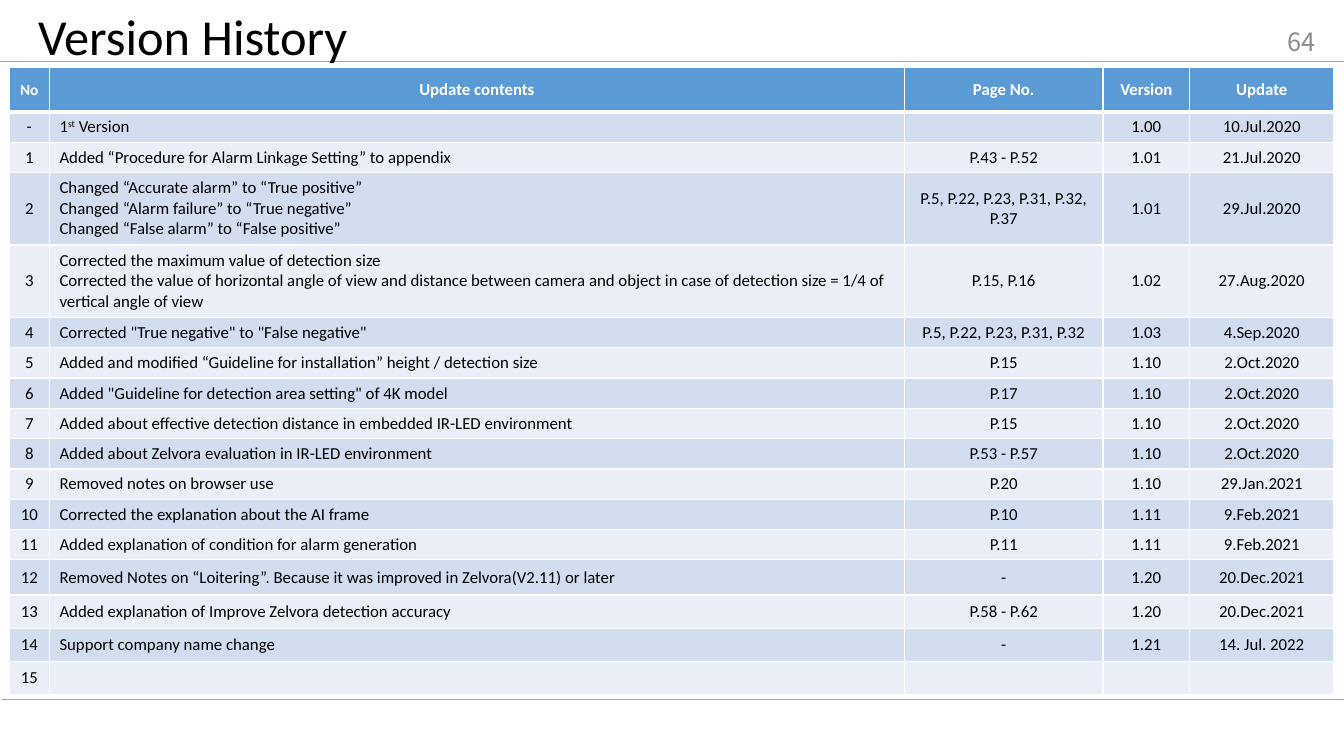
import pptx
import pptx.util
import pptx.dml.color
import pptx.enum.shapes
import pptx.enum.text
import pptx.oxml
import pptx.oxml.ns
from lxml import etree

Pt = pptx.util.Pt
RGBColor = pptx.dml.color.RGBColor
ALIGN = pptx.enum.text.PP_ALIGN
MIDDLE = pptx.enum.text.MSO_ANCHOR.MIDDLE
qn = pptx.oxml.ns.qn

BLACK = RGBColor(0x00, 0x00, 0x00)
WHITE = RGBColor(0xFF, 0xFF, 0xFF)
GRAY = RGBColor(0x8C, 0x8C, 0x8C)
RULE = RGBColor(0xA6, 0xA6, 0xA6)
HEAD = RGBColor(0x5B, 0x9B, 0xD5)
BANDS = [RGBColor(0xEA, 0xEF, 0xF7), RGBColor(0xD2, 0xDE, 0xEF)]

deck = pptx.Presentation()
deck.slide_width = pptx.util.Inches(13.33)
deck.slide_height = pptx.util.Inches(7.5)
slide = deck.slides.add_slide(deck.slide_layouts[6])
COL = deck.slide_width / 13.33
ROW = deck.slide_height / 7.5


def place(x, y, w, h):
    return int(x * COL), int(y * ROW), int(w * COL), int(h * ROW)


def write(para, text, size, color, face="Calibri", bold=False):
    run = para.add_run()
    run.text = text
    run.font.size = Pt(size)
    run.font.name = face
    run.font.bold = bold
    run.font.color.rgb = color
    return run


for left, top in [(0, 0.61), (0.02, 6.94)]:
    x, y, right, end = place(left, top, 13.33, top)
    line = slide.shapes.add_connector(
        pptx.enum.shapes.MSO_CONNECTOR.STRAIGHT, x, y, right, end)
    line.line.color.rgb = RULE
    line.line.width = Pt(0.75)
    etree.SubElement(line._element.spPr, qn("a:effectLst"))

labels = [
    ((0.28, 0.08, 11.5, 0.62), "Version History", 36, BLACK, "Calibri", ALIGN.LEFT),
    ((10.15, 0.21, 3, 0.4), "64", 18, GRAY, "Noto Sans CJK JP", ALIGN.RIGHT),
]
for box, text, size, color, face, align in labels:
    frame = slide.shapes.add_textbox(*place(*box)).text_frame
    frame.word_wrap = True
    frame.vertical_anchor = MIDDLE
    para = frame.paragraphs[0]
    para.alignment = align
    para.line_spacing = 0.9 if size == 36 else 1.0
    write(para, text, size, color, face)

rows = [
    ("No", "Update contents", "Page No.", "Version", "Update"),
    ("-", "1|st| Version", "", "1.00", "10.Jul.2020"),
    ("1", "Added “Procedure for Alarm Linkage Setting” to appendix",
     "P.43 - P.52", "1.01", "21.Jul.2020"),
    ("2", "Changed “Accurate alarm” to “True positive”\n"
     "Changed “Alarm failure” to “True negative”\n"
     "Changed “False alarm” to “False positive”",
     "P.5, P.22, P.23, P.31, P.32, P.37", "1.01", "29.Jul.2020"),
    ("3", "Corrected the maximum value of detection size\n"
     "Corrected the value of horizontal angle of view and distance between camera "
     "and object in case of detection size = 1/4 of vertical angle of view",
     "P.15, P.16", "1.02", "27.Aug.2020"),
    ("4", 'Corrected "True negative" to "False negative"',
     "P.5, P.22, P.23, P.31, P.32", "1.03", "4.Sep.2020"),
    ("5", "Added and modified “Guideline for installation” height / detection size",
     "P.15", "1.10", "2.Oct.2020"),
    ("6", 'Added "Guideline for detection area setting" of 4K model',
     "P.17", "1.10", "2.Oct.2020"),
    ("7", "Added about effective detection distance in embedded IR-LED environment",
     "P.15", "1.10", "2.Oct.2020"),
    ("8", "Added about Zelvora evaluation in IR-LED environment",
     "P.53 - P.57", "1.10", "2.Oct.2020"),
    ("9", "Removed notes on browser use", "P.20", "1.10", "29.Jan.2021"),
    ("10", "Corrected the explanation about the AI frame",
     "P.10", "1.11", "9.Feb.2021"),
    ("11", "Added explanation of condition for alarm generation",
     "P.11", "1.11", "9.Feb.2021"),
    ("12", "Removed Notes on “Loitering”. Because it was improved in Zelvora(V2.11) or later",
     "-", "1.20", "20.Dec.2021"),
    ("13", "Added explanation of Improve Zelvora detection accuracy",
     "P.58 - P.62", "1.20", "20.Dec.2021"),
    ("14", "Support company name change", "-", "1.21", "14. Jul. 2022"),
    ("15", "", "", "", ""),
]
widths = [0.4, 8.48, 1.97, 0.86, 1.43]
heights = [0.44] + [0.3] * 2 + [0.72] * 2 + [0.3] * 8 + [0.35] + [0.33] * 3

table = slide.shapes.add_table(
    len(rows), len(widths),
    *place(0.09, 0.67, sum(widths), sum(heights))).table
table.first_row = False
table.horz_banding = False
for col, width in zip(table.columns, widths):
    col.width = int(width * COL)
for row, height in zip(table.rows, heights):
    row.height = int(height * ROW)

for r, texts in enumerate(rows):
    for c, text in enumerate(texts):
        cell = table.cell(r, c)
        cell.vertical_anchor = MIDDLE
        props = cell._tc.get_or_add_tcPr()
        for side in "LRTB":
            thick = (r, side) in [(0, "B"), (1, "T")]
            edge = etree.SubElement(
                props, qn("a:ln" + side), w=str(Pt(3 if thick else 1)))
            fill = etree.SubElement(edge, qn("a:solidFill"))
            etree.SubElement(fill, qn("a:srgbClr"), val=str(WHITE))
        cell.fill.solid()
        cell.fill.fore_color.rgb = BANDS[r % 2] if r else HEAD
        for n, part in enumerate(text.split("\n")):
            frame = cell.text_frame
            para = frame.add_paragraph() if n else frame.paragraphs[0]
            para.alignment = ALIGN.LEFT if r and c == 1 else ALIGN.CENTER
            if not part:
                etree.SubElement(para._p, qn("a:endParaRPr"), sz="1200")
                continue
            for k, bit in enumerate(part.split("|")):
                run = write(para, bit, 12 if r or c else 11,
                            BLACK if r else WHITE, bold=r == 0)
                if k == 1:
                    run.font._element.set("baseline", "30000")

deck.save("out.pptx")
